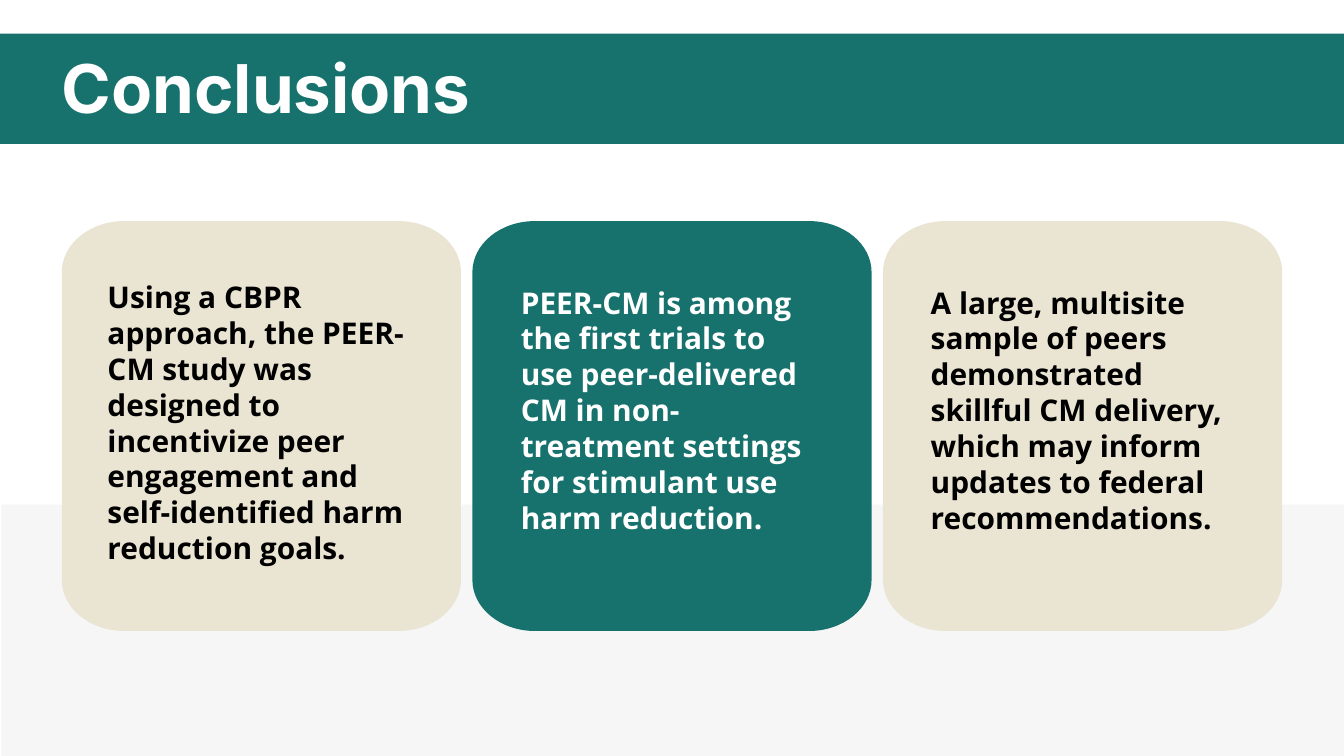
from math import cos, pi, sin, tan

from lxml.etree import SubElement
from pptx import Presentation
from pptx.dml.color import RGBColor
from pptx.enum.shapes import MSO_SHAPE as Shape
from pptx.enum.text import MSO_AUTO_SIZE as AutoSize
from pptx.oxml.ns import qn
from pptx.util import Inches, Pt

TEAL, SAND, GREY, WHITE, BLACK = "17726D", "EAE4D2", "F6F6F6", "FFFFFF", "000000"
TITLE = "Conclusions"
CARDS = [
    ("Using a CBPR approach, the PEER-CM study was designed to incentivize peer "
     "engagement and self-identified harm reduction goals.", SAND, BLACK, (1.6, 4.15, 4.5, 4.31)),
    ("PEER-CM is among the first trials to use peer-delivered CM in non-treatment "
     "settings for stimulant use harm reduction.", TEAL, WHITE, (7.75, 4.23, 4.5, 3.77)),
    ("A large, multisite sample of peers demonstrated skillful CM delivery, which may "
     "inform updates to federal recommendations.", SAND, BLACK, (13.85, 4.23, 4.5, 3.77)),
]
CARD_LEFT, CARD_TOP, CARD_WIDTH, CARD_HEIGHT, CARD_STEP = 0.92, 3.29, 5.94, 6.1, 6.11
CORNER_X, CORNER_Y = 0.93, 0.76
ARC = pi / 4
PULL = 4 / 3 * tan(ARC / 4)


def color(value):
    return RGBColor.from_string(value)


def paint(shape, fill):
    shape.shadow.inherit = False
    shape.fill.solid()
    shape.fill.fore_color.rgb = color(fill)
    shape.line.fill.background()


def add_band(page, area, fill):
    paint(page.shapes.add_shape(Shape.RECTANGLE, *map(Inches, area)), fill)


def add_command(outline, name, points):
    command = SubElement(outline, qn(f"a:{name}"))
    for x, y in points:
        SubElement(command, qn("a:pt"), x=str(Inches(x)), y=str(Inches(y)))


def round_corners(outline):
    near_x, far_x = CORNER_X, CARD_WIDTH - CORNER_X
    near_y, far_y = CORNER_Y, CARD_HEIGHT - CORNER_Y
    centers = [(far_x, near_y), (far_x, far_y), (near_x, far_y), (near_x, near_y)]
    for child in list(outline):
        outline.remove(child)
    add_command(outline, "moveTo", [(near_x, 0)])
    for quarter, (x, y) in enumerate(centers):
        start = (quarter - 1) * pi / 2
        add_command(outline, "lnTo", [(x + CORNER_X * cos(start), y + CORNER_Y * sin(start))])
        for a in (start, start + ARC):
            b = a + ARC
            curve = [(cos(a) - PULL * sin(a), sin(a) + PULL * cos(a)),
                     (cos(b) + PULL * sin(b), sin(b) - PULL * cos(b)),
                     (cos(b), sin(b))]
            add_command(outline, "cubicBezTo", [(x + CORNER_X * u, y + CORNER_Y * v) for u, v in curve])
    add_command(outline, "close", [])


def add_card(page, left, fill):
    right, bottom = left + CARD_WIDTH, CARD_TOP + CARD_HEIGHT
    builder = page.shapes.build_freeform(Inches(left), Inches(CARD_TOP))
    corners = [(right, CARD_TOP), (right, bottom), (left, bottom)]
    builder.add_line_segments([(Inches(x), Inches(y)) for x, y in corners], close=True)
    card = builder.convert_to_shape()
    round_corners(next(card.element.iter(qn("a:path"))))
    paint(card, fill)


def add_text(page, area, text, font, size, ink, spacing):
    frame = page.shapes.add_textbox(*map(Inches, area)).text_frame
    frame.word_wrap = True
    frame.auto_size = AutoSize.SHAPE_TO_FIT_TEXT
    frame.margin_left = frame.margin_top = frame.margin_right = frame.margin_bottom = 0
    para = frame.paragraphs[0]
    para.line_spacing = Pt(spacing)
    span = para.add_run()
    span.text = text
    span.font.name, span.font.size, span.font.bold = font, Pt(size), True
    span.font.color.rgb = color(ink)


def main():
    """Build the conclusions slide with three cards."""
    deck = Presentation()
    deck.slide_width, deck.slide_height = Inches(20), Inches(11.25)
    page = deck.slides.add_slide(deck.slide_layouts[6])
    add_band(page, (0.02, 7.51, 20, 3.74), GREY)
    for index, (_, fill, _, _) in enumerate(CARDS):
        add_card(page, CARD_LEFT + index * CARD_STEP, fill)
    add_band(page, (0, 0.5, 20, 1.64), TEAL)
    add_text(page, (0.92, 0.84, 8.91, 1.08), TITLE, "Inter", 72, WHITE, 75.6)
    for text, _, ink, area in CARDS:
        add_text(page, area, text, "Open Sans", 32, ink, 38.4)
    deck.save("out.pptx")


if __name__ == "__main__":
    main()
